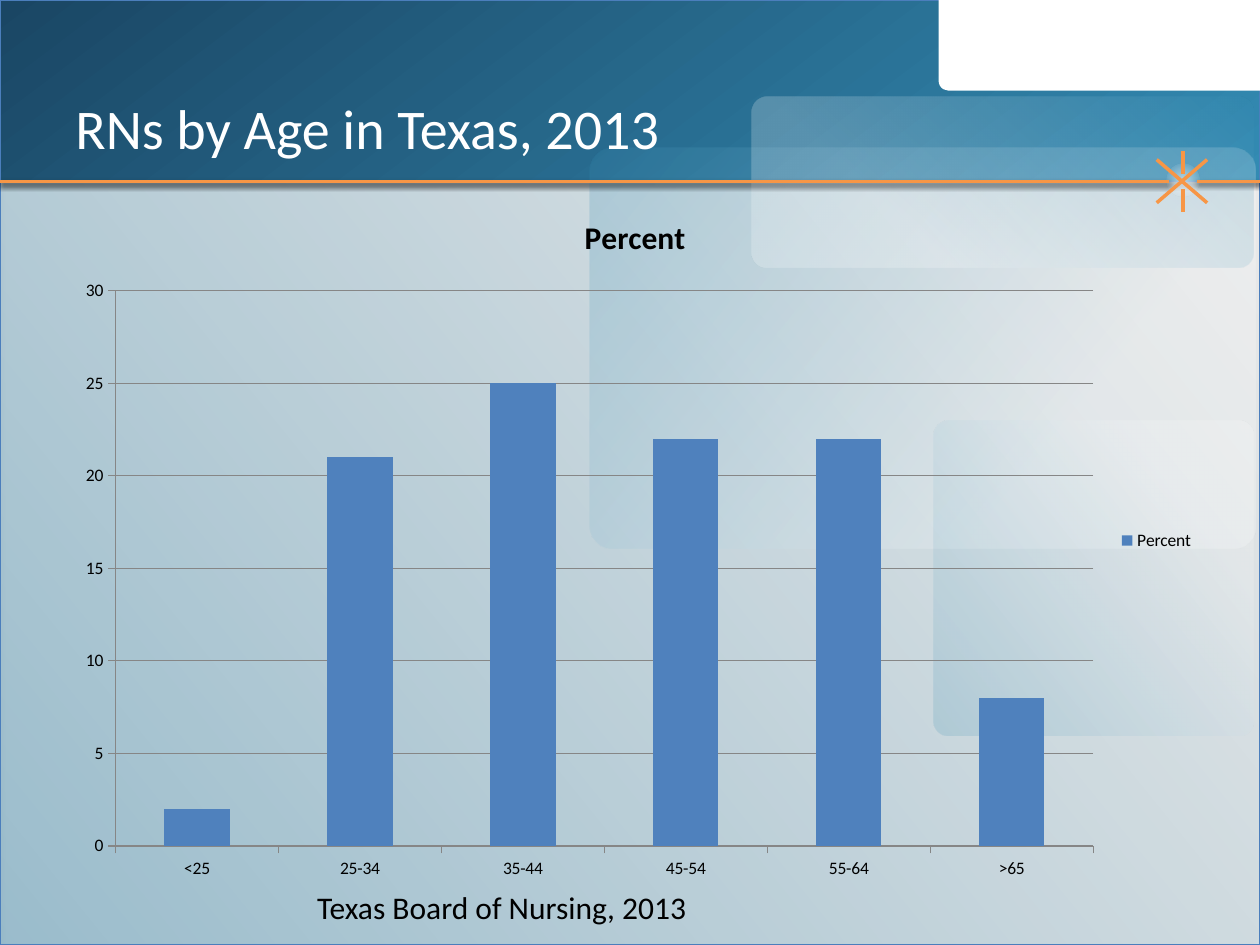
from lxml import etree
from pptx import Presentation
from pptx.chart.data import CategoryChartData
from pptx.dml.color import RGBColor
from pptx.enum.chart import XL_CHART_TYPE, XL_LEGEND_POSITION, XL_TICK_MARK
from pptx.enum.shapes import MSO_CONNECTOR, MSO_SHAPE
from pptx.enum.text import MSO_ANCHOR, MSO_AUTO_SIZE
from pptx.oxml.ns import qn
from pptx.util import Pt

RECTANGLE = MSO_SHAPE.RECTANGLE
ROUNDED = MSO_SHAPE.ROUNDED_RECTANGLE
OVAL = MSO_SHAPE.OVAL
STRAIGHT = MSO_CONNECTOR.STRAIGHT
COLUMNS = XL_CHART_TYPE.COLUMN_CLUSTERED
LEGEND_RIGHT = XL_LEGEND_POSITION.RIGHT
TICK_OUT = XL_TICK_MARK.OUTSIDE
TOP = MSO_ANCHOR.TOP
GROW = MSO_AUTO_SIZE.SHAPE_TO_FIT_TEXT

color = RGBColor.from_string
FONT = "Calibri"
TEAL, NAVY, WHITE, BLACK = "338BB3", "1A4664", "FFFFFF", "000000"
ORANGE, EDGE, BAR, GRID = "F79646", "4B7EBC", "4F81BD", "868686"


def add_effects(item, opacity):
    effects = etree.SubElement(item._element.spPr, qn("a:effectLst"))
    if opacity:
        shadow = etree.SubElement(effects, qn("a:outerShdw"), blurRad=str(Pt(3.1)),
                                  dist=str(Pt(1.7)), dir="5400000", rotWithShape="0")
        tint = etree.SubElement(shadow, qn("a:srgbClr"), val=BLACK)
        etree.SubElement(tint, qn("a:alpha"), val=str(opacity * 1000))


def add_gradient(shape, stops, angle):
    fill = etree.Element(qn("a:gradFill"), rotWithShape="1")
    stop_list = etree.SubElement(fill, qn("a:gsLst"))
    for position, tone, opacity in stops:
        stop = etree.SubElement(stop_list, qn("a:gs"), pos=str(position * 1000))
        tint = etree.SubElement(stop, qn("a:srgbClr"), val=tone)
        etree.SubElement(tint, qn("a:alpha"), val=str(opacity * 1000))
    if angle is None:
        circle = etree.SubElement(fill, qn("a:path"), path="circle")
        etree.SubElement(circle, qn("a:fillToRect"), l="50000", t="50000", r="50000", b="50000")
    else:
        etree.SubElement(fill, qn("a:lin"), ang=str(angle * 60000), scaled="0")
    shape._element.spPr.find(qn("a:prstGeom")).addnext(fill)


deck = Presentation()
deck.slide_width, deck.slide_height = Pt(720), Pt(540)
page = deck.slides.add_slide(deck.slide_layouts[6])
shapes = page.shapes

bands = [
    (103.7, 436.3, [(0, TEAL, 39), (100, WHITE, 39)], 321),
    (0, 103.7, [(0, NAVY, 100), (100, TEAL, 100)], 53),
]
for top, height, stops, angle in bands:
    band = shapes.add_shape(RECTANGLE, 0, Pt(top), Pt(720), Pt(height))
    add_gradient(band, stops, angle)
    band.line.color.rgb = color(EDGE)
    band.line.width = Pt(0.75)
    add_effects(band, 35)

panels = [
    (337, 84.2, 380.2, 229, 0.058, 29, 22, 219),
    (429.8, 55.4, 286.6, 97.2, 0.092, 29, 22, 312),
    (533.5, 240.5, 182.9, 180, 0.048, 23, 17, 143),
]
for left, top, width, height, corner, start, opacity, angle in panels:
    panel = shapes.add_shape(ROUNDED, Pt(left), Pt(top), Pt(width), Pt(height))
    panel.adjustments[0] = corner
    add_gradient(panel, [(start, WHITE, opacity), (100, TEAL, opacity)], angle)
    panel.line.fill.background()
    add_effects(panel, 0)

glow = shapes.add_shape(OVAL, Pt(666.7), Pt(93.6), Pt(18.7), Pt(18.7))
add_gradient(glow, [(2, WHITE, 54), (81, WHITE, 0)], None)
glow.line.fill.background()
add_effects(glow, 0)

rays = [
    (0, 103.7, 668.2, 103.7, 38),
    (676, 86.4, 676, 99.4, 0),
    (689.8, 91.2, 661, 115.9, 0),
    (661, 91.2, 689.8, 115.9, 0),
    (676, 121, 676, 108, 0),
    (684, 103.7, 720, 103.7, 38),
]
for x1, y1, x2, y2, opacity in rays:
    ray = shapes.add_connector(STRAIGHT, Pt(x1), Pt(y1), Pt(x2), Pt(y2))
    ray.line.color.rgb = color(ORANGE)
    ray.line.width = Pt(2)
    add_effects(ray, opacity)

corner_tab = shapes.add_shape(ROUNDED, Pt(536.4), Pt(-9.4), Pt(198.7), Pt(61.2))
corner_tab.adjustments[0] = 0.092
corner_tab.fill.solid()
corner_tab.fill.fore_color.rgb = color(WHITE)
corner_tab.line.fill.background()
corner_tab.shadow.inherit = False

ages = CategoryChartData()
ages.categories = ["<25", "25-34", "35-44", "45-54", "55-64", ">65"]
ages.add_series("Percent", [2, 21, 25, 22, 22, 8])
chart = shapes.add_chart(COLUMNS, Pt(36), Pt(108), Pt(653.8), Pt(401.8), ages).chart
chart.font.name = FONT
chart.font.size = Pt(10)
chart.font.color.rgb = color(BLACK)
chart.has_title = True
chart.chart_title.text_frame.text = "Percent"
heading = chart.chart_title.text_frame.paragraphs[0].runs[0].font
heading.name, heading.size, heading.bold = FONT, Pt(18), True
heading.color.rgb = color(BLACK)
chart.has_legend = True
chart.legend.position = LEGEND_RIGHT
chart.legend.include_in_layout = False
plot = chart.plots[0]
plot.gap_width = 150
plot.vary_by_categories = False
bars = plot.series[0].format.fill
bars.solid()
bars.fore_color.rgb = color(BAR)
chart.value_axis.has_major_gridlines = True
chart.value_axis.maximum_scale = 30
chart.value_axis.minimum_scale = 0
chart.value_axis.major_unit = 5
chart.value_axis.major_gridlines.format.line.color.rgb = color(GRID)
for axis in (chart.category_axis, chart.value_axis):
    axis.major_tick_mark = TICK_OUT
    axis.format.line.color.rgb = color(GRID)

labels = [
    ("RNs by Age in Texas, 2013", 36, 49.7, 411.8, 64.8, 32, WHITE, True),
    ("Texas Board of Nursing, 2013", 174.2, 504, 227.5, 29, 18, BLACK, False),
]
for text, left, top, width, height, size, tone, wrap in labels:
    box = shapes.add_textbox(Pt(left), Pt(top), Pt(width), Pt(height))
    frame = box.text_frame
    frame.text = text
    frame.word_wrap = wrap
    frame.vertical_anchor = TOP
    if not wrap:
        frame.auto_size = GROW
    span = frame.paragraphs[0].runs[0]
    span.font.name = FONT
    span.font.size = Pt(size)
    span.font.color.rgb = color(tone)

deck.save("out.pptx")
